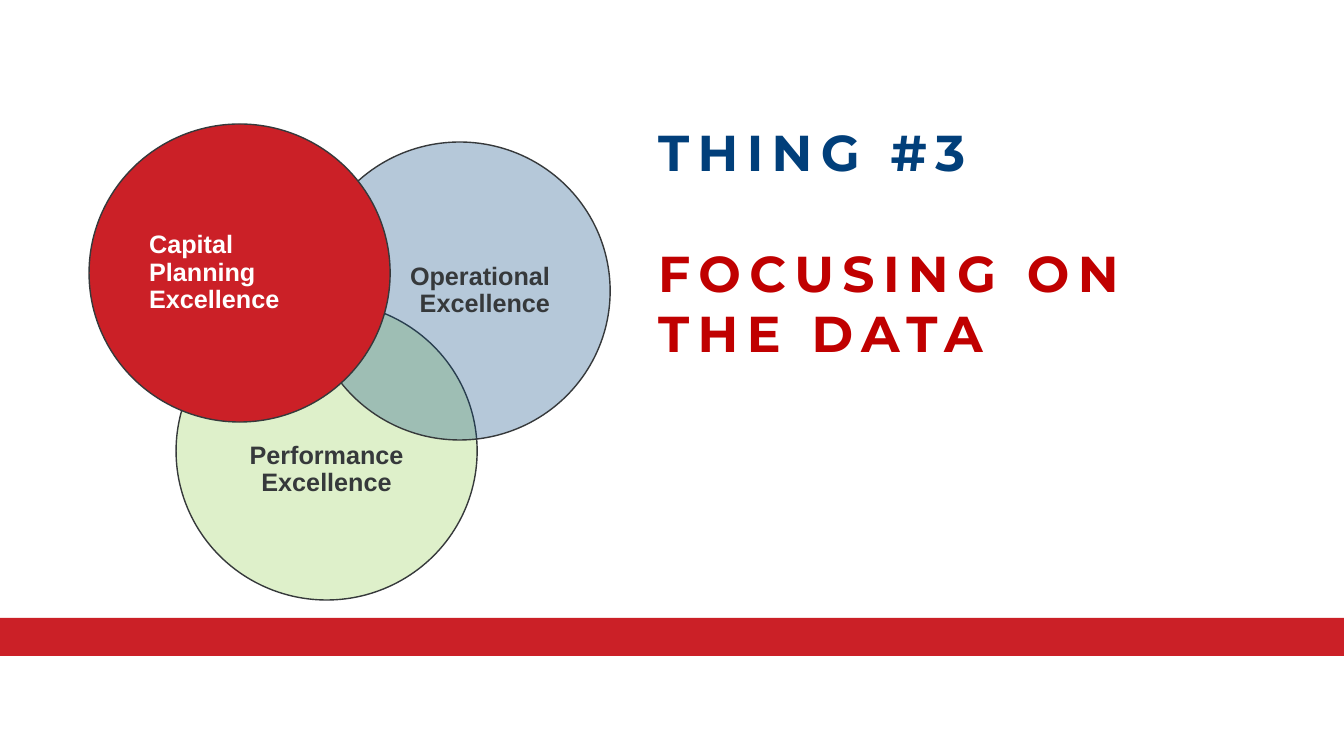
from lxml import etree
from pptx import Presentation
from pptx.dml.color import RGBColor
from pptx.enum.shapes import MSO_SHAPE
from pptx.enum.text import MSO_ANCHOR, MSO_AUTO_SIZE, PP_ALIGN
from pptx.oxml.ns import qn
from pptx.util import Inches, Pt

PX = Inches(1) / 100.8
WHITE = RGBColor(0xFF, 0xFF, 0xFF)
RED = RGBColor(0xCB, 0x20, 0x27)
DARK_RED = RGBColor(0xC0, 0x00, 0x00)
NAVY = RGBColor(0x01, 0x3F, 0x7A)
BLUE = RGBColor(0x0D, 0x4C, 0x82)
GREEN = RGBColor(0x92, 0xD0, 0x50)
CHARCOAL = RGBColor(0x36, 0x39, 0x3B)

OVAL, RECTANGLE = MSO_SHAPE.OVAL, MSO_SHAPE.RECTANGLE
LEFT, CENTER, RIGHT = PP_ALIGN.LEFT, PP_ALIGN.CENTER, PP_ALIGN.RIGHT
MIDDLE, BOTTOM = MSO_ANCHOR.MIDDLE, MSO_ANCHOR.BOTTOM

CIRCLE_WIDTH, CIRCLE_HEIGHT = 301, 298
CIRCLE_INSET = 16
TITLE_FONT = dict(name="Montserrat", size=Pt(36), bold=True)
LABEL_FONT = dict(name="Arial", size=Pt(18), bold=True)


def px(length):
    return round(length * PX)


def apply_format(target, **values):
    for name, value in values.items():
        setattr(target, name, value)


def set_frame(frame, anchor, left, top, right, bottom):
    apply_format(frame, word_wrap=True, auto_size=MSO_AUTO_SIZE.NONE,
                 vertical_anchor=anchor, margin_left=px(left), margin_top=px(top),
                 margin_right=px(right), margin_bottom=px(bottom))


def add_span(para, text, color, font):
    span = para.add_run()
    span.text = text
    apply_format(span.font, **font)
    span.font.color.rgb = color
    return span


def add_filled_shape(page, kind, left, top, width, height, color):
    shape = page.shapes.add_shape(kind, px(left), px(top), px(width), px(height))
    shape.shadow.inherit = False
    shape.fill.solid()
    shape.fill.fore_color.rgb = color
    shape.line.fill.background()
    return shape


def set_opacity(shape, percent):
    color = shape.fill._xPr.find(qn("a:solidFill"))[0]
    etree.SubElement(color, qn("a:alpha"), val=str(percent * 1000))


def add_circle(page, left, top, color, opacity, label, label_color, align, drop=0):
    """Draw one labelled circle; drop moves its label below the middle."""
    circle = add_filled_shape(page, OVAL, left, top, CIRCLE_WIDTH, CIRCLE_HEIGHT, color)
    if opacity < 100:
        set_opacity(circle, opacity)
    circle.line.color.rgb = CHARCOAL
    circle.line.width = Pt(1)
    set_frame(circle.text_frame, MIDDLE, CIRCLE_INSET, CIRCLE_INSET + 2 * drop,
              CIRCLE_INSET, CIRCLE_INSET)
    para = circle.text_frame.paragraphs[0]
    apply_format(para, alignment=align, line_spacing=0.9)
    add_span(para, label, label_color, LABEL_FONT)


def add_title(page):
    title = page.shapes.title
    apply_format(title, left=px(658), top=px(88), width=px(533), height=px(275))
    frame = title.text_frame
    set_frame(frame, BOTTOM, 0, 0, 0, 0)
    number, topic = frame.paragraphs[0], frame.add_paragraph()
    topic.space_before = Pt(43)
    for para, text, color in ((number, "THING #3", NAVY),
                              (topic, "FOCUSING ON THE DATA", DARK_RED)):
        para.alignment = LEFT
        span = add_span(para, text, color, TITLE_FONT)
        span._r.get_or_add_rPr().set("spc", "600")


def main():
    deck = Presentation()
    deck.slide_width, deck.slide_height = Inches(13.33), Inches(7.5)
    page = deck.slides.add_slide(deck.slide_layouts[5])
    add_filled_shape(page, RECTANGLE, 0, 618, 1344, 38, RED)
    add_title(page)
    add_circle(page, 176, 302, GREEN, 30, "Performance Excellence", CHARCOAL, CENTER, drop=19)
    add_circle(page, 309, 142, BLUE, 30, "Operational Excellence", CHARCOAL, RIGHT)
    add_circle(page, 89, 124, RED, 100, "Capital Planning Excellence", WHITE, LEFT)
    deck.save("out.pptx")


if __name__ == "__main__":
    main()
